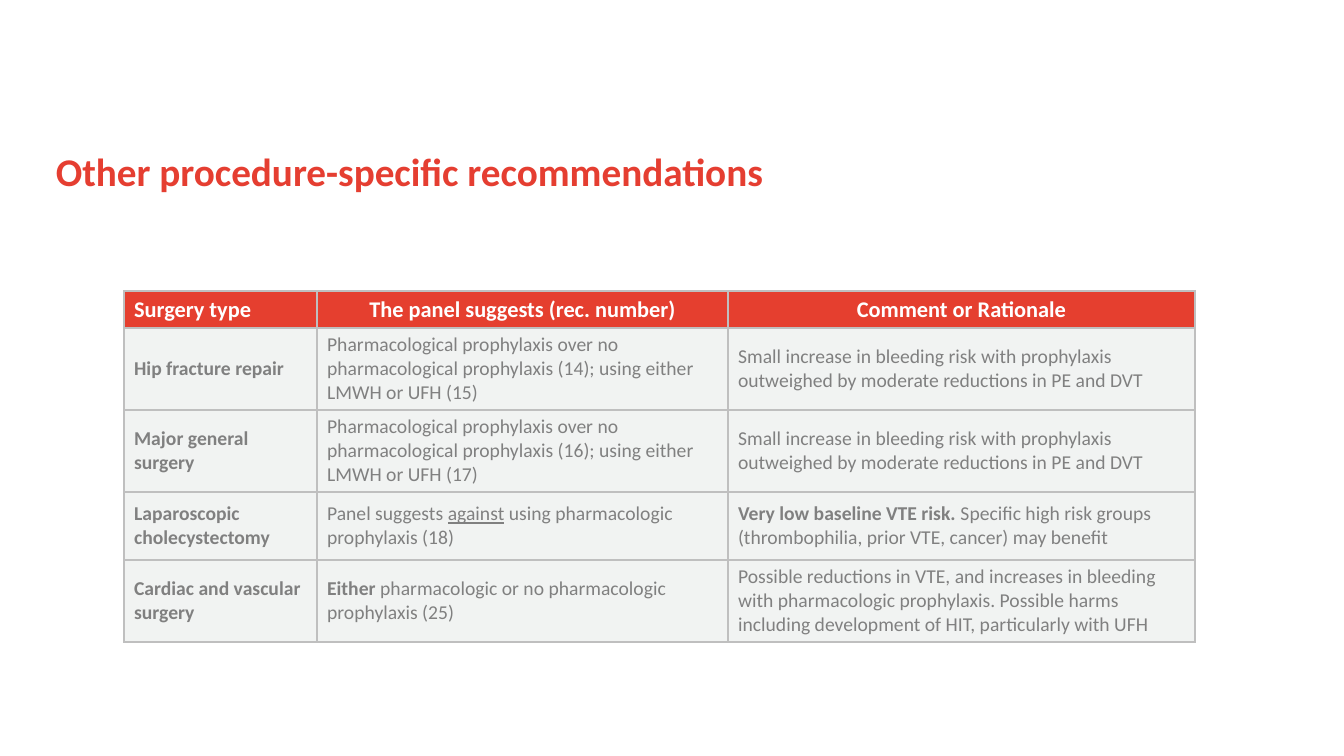
from lxml.etree import SubElement
from pptx import Presentation
from pptx.dml.color import RGBColor
from pptx.enum.text import MSO_ANCHOR, PP_ALIGN
from pptx.oxml.ns import qn
from pptx.util import Pt

EMU_PER_PX = 914400 / 100.8
FONT = "Calibri"
COLORS = {
    "title": "E53E31",
    "header": "E53F2F",
    "header_text": "FFFFFF",
    "body": "F1F3F2",
    "body_text": "808080",
    "border": "BFBFBF",
}
COLUMN_WIDTHS = [193, 411, 467]
ROW_HEIGHTS = [37, 82, 82, 68, 82]

# Each cell is a list of runs: (text, style), where style is "", "bold" or "underline"
SMALL_INCREASE = [("Small increase in bleeding risk with prophylaxis outweighed by "
                   "moderate reductions in PE and DVT", "")]


def prophylaxis_over_none(first, second):
    return [(f"Pharmacological prophylaxis over no pharmacological prophylaxis ({first}); "
             f"using either LMWH or UFH ({second})", "")]


ROWS = [
    [[("Surgery type", "bold")],
     [("The panel suggests (rec. number)", "bold")],
     [("Comment or Rationale", "bold")]],
    [[("Hip fracture repair", "bold")], prophylaxis_over_none(14, 15), SMALL_INCREASE],
    [[("Major general surgery", "bold")], prophylaxis_over_none(16, 17), SMALL_INCREASE],
    [[("Laparoscopic cholecystectomy", "bold")],
     [("Panel suggests ", ""), ("against", "underline"),
      (" using pharmacologic prophylaxis (18)", "")],
     [("Very low baseline VTE risk.", "bold"),
      (" Specific high risk groups (thrombophilia, prior VTE, cancer) may benefit", "")]],
    [[("Cardiac and vascular surgery", "bold")],
     [("Either", "bold"), (" pharmacologic or no pharmacologic prophylaxis (25)", "")],
     [("Possible reductions in VTE, and increases in bleeding with pharmacologic "
       "prophylaxis. Possible harms including development of HIT, particularly with UFH", "")]],
]


def px(length):
    return round(length * EMU_PER_PX)


def add_runs(paragraph, runs, size, color):
    for text, style in runs:
        run = paragraph.add_run()
        run.text = text
        run.font.name = FONT
        run.font.size = Pt(size)
        run.font.bold = style == "bold"
        run.font.underline = style == "underline"
        run.font.color.rgb = RGBColor.from_string(COLORS[color])


def set_borders(cell):
    properties = cell._tc.get_or_add_tcPr()
    for position, side in enumerate(("a:lnL", "a:lnR", "a:lnT", "a:lnB")):
        line = SubElement(properties, qn(side), w=str(Pt(1)))
        fill = SubElement(line, qn("a:solidFill"))
        SubElement(fill, qn("a:srgbClr"), val=COLORS["border"])
        properties.insert(position, line)  # borders come before the cell fill


def add_title(slide, left, top, width, height):
    shape = slide.shapes.add_textbox(px(left), px(top), px(width), px(height))
    shape.text_frame.word_wrap = True
    shape.text_frame.vertical_anchor = MSO_ANCHOR.TOP
    paragraph = shape.text_frame.paragraphs[0]
    paragraph.line_spacing = 0.9
    add_runs(paragraph, [("Other procedure-specific recommendations", "bold")], 28, "title")


def add_recommendations(slide, left, top):
    table = slide.shapes.add_table(
        len(ROWS), len(COLUMN_WIDTHS), px(left), px(top),
        px(sum(COLUMN_WIDTHS)), px(sum(ROW_HEIGHTS))).table
    for column, width in zip(table.columns, COLUMN_WIDTHS):
        column.width = px(width)
    for row, height in zip(table.rows, ROW_HEIGHTS):
        row.height = px(height)

    for row_index, row in enumerate(ROWS):
        kind, size = ("header", 16) if row_index == 0 else ("body", 14)
        for column_index, runs in enumerate(row):
            cell = table.cell(row_index, column_index)
            cell.fill.solid()
            cell.fill.fore_color.rgb = RGBColor.from_string(COLORS[kind])
            cell.vertical_anchor = MSO_ANCHOR.MIDDLE
            set_borders(cell)
            paragraph = cell.text_frame.paragraphs[0]
            if kind == "header" and column_index > 0:
                paragraph.alignment = PP_ALIGN.CENTER
            add_runs(paragraph, runs, size, f"{kind}_text")


def main():
    presentation = Presentation()
    presentation.slide_width = px(1344)
    presentation.slide_height = px(756)
    slide = presentation.slides.add_slide(presentation.slide_layouts[6])
    add_title(slide, 46, 148, 1210, 79)
    add_recommendations(slide, 124, 291)
    presentation.save("out.pptx")


if __name__ == "__main__":
    main()
